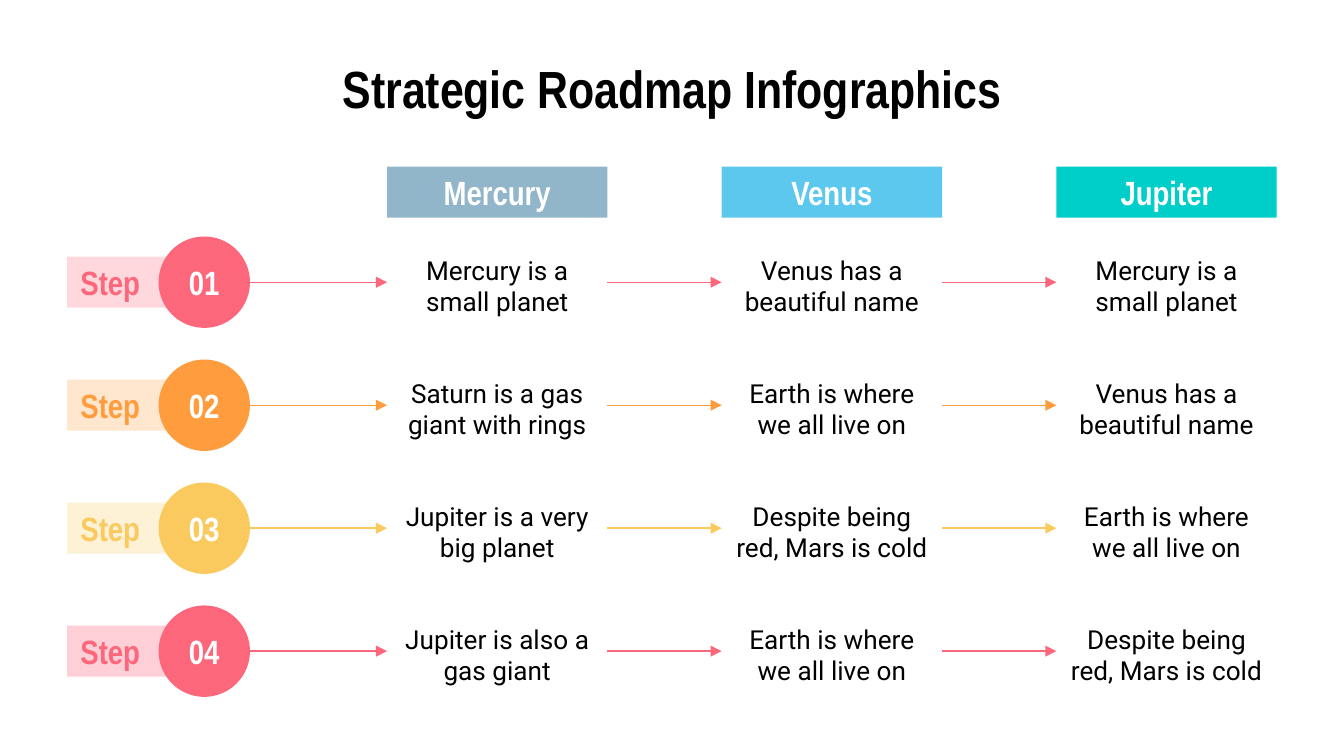
from lxml import etree
from pptx import Presentation
from pptx.dml.color import RGBColor
from pptx.enum.shapes import MSO_CONNECTOR, MSO_SHAPE
from pptx.enum.text import MSO_ANCHOR, MSO_AUTO_SIZE, PP_ALIGN
from pptx.oxml.ns import qn
from pptx.util import Emu, Pt

RECTANGLE, OVAL = MSO_SHAPE.RECTANGLE, MSO_SHAPE.OVAL
STRAIGHT = MSO_CONNECTOR.STRAIGHT
LEFT, CENTER = PP_ALIGN.LEFT, PP_ALIGN.CENTER
TOP, MIDDLE = MSO_ANCHOR.TOP, MSO_ANCHOR.MIDDLE
LEFT_SIDE, RIGHT_SIDE = 1, 3

PX = 4572  # EMU per px, 200 px to the inch
HEADING_FONT, BODY_FONT = "Arial Narrow", "Roboto"
COLORS = {
    "black": "000000", "white": "FFFFFF",
    "pink": "FD677B", "orange": "FF9C3E", "yellow": "FBCA5F",
    "steel": "92B6C9", "sky": "5CC8EE", "teal": "00CEC8",
}

# Grid of planet columns and step rows
COLUMN_LEFT, COLUMN_PITCH, COLUMN_WIDTH = 576, 498, 328
ROW_MIDDLE, ROW_PITCH = 420, 183
BAR_HEIGHT, CELL_HEIGHT = 76, 124
TAG_LEFT, TAG_WIDTH = 100, 204
CIRCLE_LEFT, CIRCLE_SIZE = 236, 136

COLUMNS = [("Mercury", "steel"), ("Venus", "sky"), ("Jupiter", "teal")]
STEPS = [  # colour, tag opacity in percent, one text per column
    ("pink", 25, ["Mercury is a small planet", "Venus has a beautiful name",
                  "Mercury is a small planet"]),
    ("orange", 25, ["Saturn is a gas giant with rings", "Earth is where we all live on",
                    "Venus has a beautiful name"]),
    ("yellow", 25, ["Jupiter is a very big planet", "Despite being red, Mars is cold",
                    "Earth is where we all live on"]),
    ("pink", 31, ["Jupiter is also a gas giant", "Earth is where we all live on",
                  "Despite being red, Mars is cold"]),
]


def px(*lengths):
    return [Emu(length * PX) for length in lengths]


def rgb(name):
    return RGBColor.from_string(COLORS[name])


def write_text(shape, text, size=18, font=HEADING_FONT, color="white",
               bold=True, align=CENTER, anchor=MIDDLE):
    frame = shape.text_frame
    frame.word_wrap = True
    frame.auto_size = MSO_AUTO_SIZE.NONE
    frame.vertical_anchor = anchor
    frame.margin_left, frame.margin_top, frame.margin_right, frame.margin_bottom = px(20, 20, 20, 20)
    paragraph = frame.paragraphs[0]
    paragraph.alignment = align
    run = paragraph.add_run()
    run.text = text
    run.font.size = Pt(size)
    run.font.name = font
    run.font.bold = bold
    run.font.color.rgb = rgb(color)


def add_block(shapes, kind, box, color, opacity=100):
    shape = shapes.add_shape(kind, *px(*box))
    shape.shadow.inherit = False
    shape.fill.solid()
    shape.fill.fore_color.rgb = rgb(color)
    shape.line.fill.background()
    if opacity < 100:
        fill_color = shape.element.spPr.find(".//" + qn("a:srgbClr"))
        etree.SubElement(fill_color, qn("a:alpha"), val=str(opacity * 1000))
    return shape


def add_title(slide, text):
    title = slide.shapes.title
    title.left, title.top, title.width, title.height = px(100, 90, 1800, 82)
    write_text(title, text, size=28, color="black")


def add_step(slide, number, middle, color, opacity):
    group = slide.shapes.add_group_shape()
    tag = add_block(group.shapes, RECTANGLE,
                    (TAG_LEFT, middle - BAR_HEIGHT // 2, TAG_WIDTH, BAR_HEIGHT), color, opacity)
    write_text(tag, "Step", color=color, align=LEFT)
    circle = add_block(group.shapes, OVAL,
                       (CIRCLE_LEFT, middle - CIRCLE_SIZE // 2, CIRCLE_SIZE, CIRCLE_SIZE), color)
    write_text(circle, f"{number:02d}")


def add_cell(slide, text, left, middle):
    cell = slide.shapes.add_textbox(*px(left, middle - CELL_HEIGHT // 2, COLUMN_WIDTH, CELL_HEIGHT))
    write_text(cell, text, size=14, font=BODY_FONT, color="black", bold=False, anchor=TOP)
    return cell


def add_arrow(slide, start, middle, color, source, target):
    arrow = slide.shapes.add_connector(STRAIGHT, *px(start, middle, start, middle))
    if source is not None:
        arrow.begin_connect(source, RIGHT_SIDE)
    arrow.end_connect(target, LEFT_SIDE)
    arrow.line.color.rgb = rgb(color)
    arrow.line.width = Pt(0.75)
    properties = arrow.element.spPr
    etree.SubElement(properties.find(qn("a:ln")), qn("a:tailEnd"), type="triangle")
    etree.SubElement(properties, qn("a:effectLst"))


def main():
    presentation = Presentation()
    presentation.slide_width, presentation.slide_height = px(2000, 1125)
    slide = presentation.slides.add_slide(presentation.slide_layouts[5])
    add_title(slide, "Strategic Roadmap Infographics")

    # Column headers
    lefts = [COLUMN_LEFT + COLUMN_PITCH * index for index in range(len(COLUMNS))]
    for left, (planet, color) in zip(lefts, COLUMNS):
        header = add_block(slide.shapes, RECTANGLE, (left, 248, COLUMN_WIDTH, BAR_HEIGHT), color)
        write_text(header, planet)

    # Step rows: badge, then an arrow into each text
    for index, (color, opacity, texts) in enumerate(STEPS):
        middle = ROW_MIDDLE + ROW_PITCH * index
        add_step(slide, index + 1, middle, color, opacity)
        source, start = None, CIRCLE_LEFT + CIRCLE_SIZE
        for left, text in zip(lefts, texts):
            cell = add_cell(slide, text, left, middle)
            add_arrow(slide, start, middle, color, source, cell)
            source, start = cell, left + COLUMN_WIDTH

    presentation.save("out.pptx")


if __name__ == "__main__":
    main()
